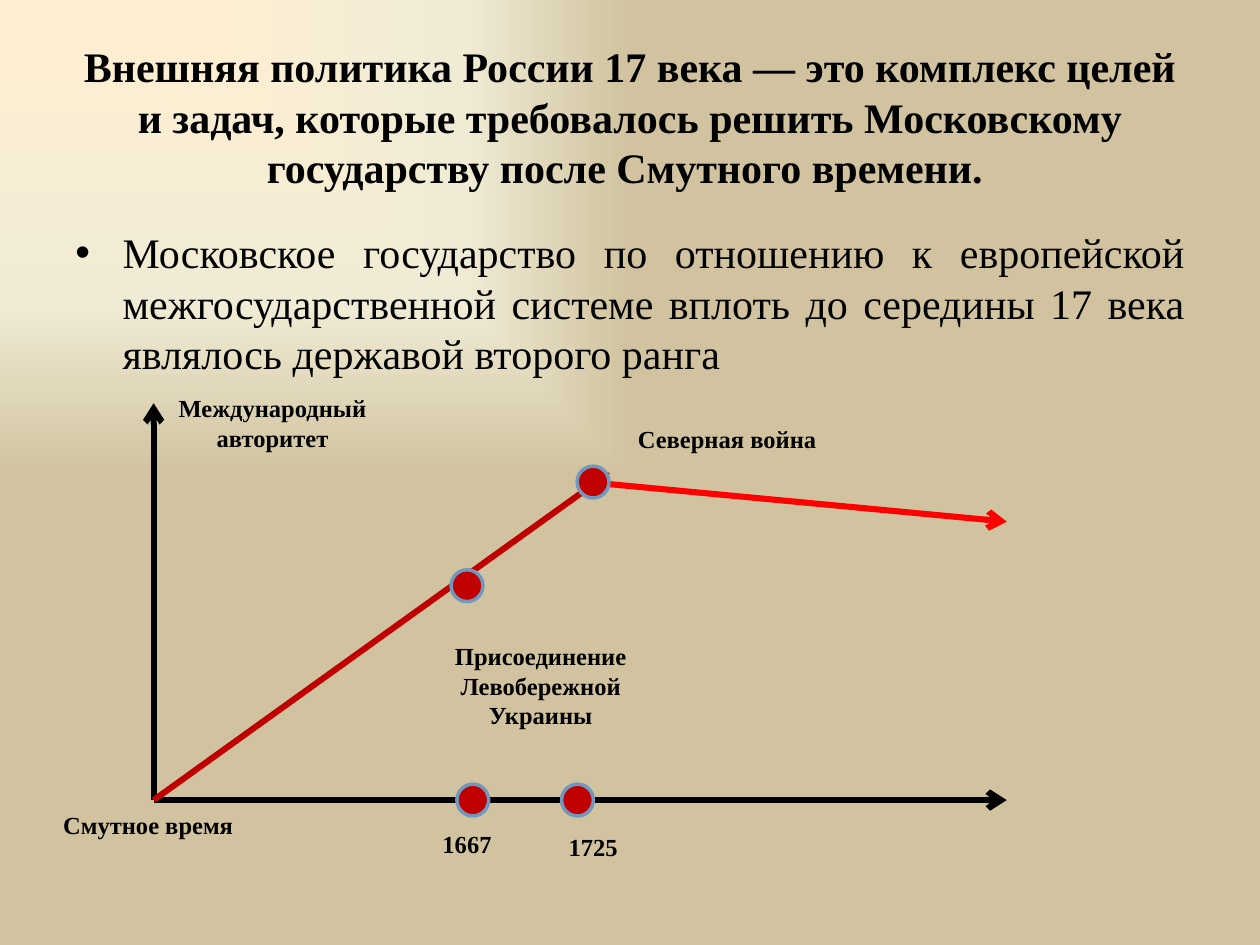
from lxml.etree import SubElement
from pptx import Presentation
from pptx.dml.color import RGBColor
from pptx.enum.shapes import MSO_CONNECTOR as Connector, MSO_SHAPE as Shape
from pptx.enum.text import MSO_ANCHOR as Anchor, PP_ALIGN as Align
from pptx.oxml import parse_xml
from pptx.oxml.ns import nsdecls, qn
from pptx.util import Pt

TITLE = ("Внешняя политика России 17 века — это комплекс целей и задач, которые "
         "требовалось решить Московскому государству после Смутного времени. ")
BODY = ("Московское государство по отношению к европейской межгосударственной "
        "системе вплоть до середины 17 века являлось державой второго ранга")

THEME = {
    "font": "Times New Roman", "heading": 24, "label": 14,
    "text": "000000", "axis": "000000", "rise": "C00000", "decline": "FF0000",
    "dot": "C00000", "dot_edge": "7197BD", "line": 3.5, "dot_line": 2,
    "background": [(0, "FFEFD1"), (65, "F0EBD5"), (100, "D1C39F")],
}

ORIGIN = (87.8, 457.2)
AXIS_END = 575.3
DOT_SIZE = 18.2
BULLET_INDENT = 27

ARROWS = [
    ("axis", ORIGIN, (ORIGIN[0], 230.4)),
    ("axis", ORIGIN, (AXIS_END, ORIGIN[1])),
    ("rise", ORIGIN, (348.5, 270)),
    ("decline", (339.1, 275.8), (AXIS_END, 298.1)),
]
DOT_CENTRES = [(338.9, 275.5), (266.9, 334.7), (270.2, ORIGIN[1]), (330, ORIGIN[1])]
LABELS = [
    (["Международный", "авторитет"], (87.8, 221.2, 136, 41.2)),
    (["Смутное время"], (16.7, 459.6, 136, 24.2)),
    (["Присоединение Левобережной Украины"], (241, 363, 136, 58.2)),
    (["Северная война"], (347.5, 238.5, 136, 24.2)),
    (["1667"], (221.4, 470.2, 91, 24.2)),
    (["1725"], (293.5, 471.8, 91, 24.2)),
]


def color(name):
    return RGBColor.from_string(THEME[name])


def paint_background(page):
    page.background.fill.solid()
    stops = "".join(f'<a:gs pos="{place * 1000}"><a:srgbClr val="{tint}"/></a:gs>'
                    for place, tint in THEME["background"])
    gradient = parse_xml(
        f'<a:gradFill {nsdecls("a")} rotWithShape="1"><a:gsLst>{stops}</a:gsLst>'
        '<a:path path="rect"><a:fillToRect r="100000" b="100000"/></a:path></a:gradFill>')
    properties = page.background._cSld.find(".//" + qn("p:bgPr"))
    properties.replace(properties[0], gradient)


def add_text(page, lines, place, size, bold=True, align=Align.CENTER,
             anchor=Anchor.TOP, bullet=False):
    frame = page.shapes.add_textbox(*map(Pt, place)).text_frame
    frame.word_wrap = True
    frame.vertical_anchor = anchor
    frame.text = "\n".join(lines)
    for para in frame.paragraphs:
        para.alignment = align
        if bullet:
            properties = para._p.get_or_add_pPr()
            properties.set("marL", str(Pt(BULLET_INDENT)))
            properties.set("indent", str(-Pt(BULLET_INDENT)))
            SubElement(properties, qn("a:buFont"), typeface="Arial")
            SubElement(properties, qn("a:buChar"), char="•")
        para.font.name = THEME["font"]
        para.font.size = Pt(THEME[size])
        para.font.bold = bold
        para.font.color.rgb = color("text")


def add_arrow(page, tint, start, end):
    arrow = page.shapes.add_connector(Connector.STRAIGHT, *map(Pt, start + end))
    arrow.line.color.rgb = color(tint)
    arrow.line.width = Pt(THEME["line"])
    SubElement(arrow.line._get_or_add_ln(), qn("a:tailEnd"), type="arrow")
    SubElement(arrow._element.spPr, qn("a:effectLst"))


def add_dot(page, x, y):
    corner = (x - DOT_SIZE / 2, y - DOT_SIZE / 2)
    dot = page.shapes.add_shape(Shape.OVAL, *map(Pt, corner + (DOT_SIZE, DOT_SIZE)))
    dot.shadow.inherit = False
    dot.fill.solid()
    dot.fill.fore_color.rgb = color("dot")
    dot.line.color.rgb = color("dot_edge")
    dot.line.width = Pt(THEME["dot_line"])


def main():
    """Build the slide on Russian foreign policy in the 17th century."""
    deck = Presentation()
    deck.slide_width, deck.slide_height = Pt(720), Pt(540)
    page = deck.slides.add_slide(deck.slide_layouts[6])
    paint_background(page)
    add_text(page, [TITLE], (36, 21.6, 648, 90), "heading", anchor=Anchor.MIDDLE)
    add_text(page, [BODY], (36, 126, 648, 356.4), "heading", bold=False,
             align=Align.JUSTIFY, bullet=True)
    for arrow in ARROWS:
        add_arrow(page, *arrow)
    for centre in DOT_CENTRES:
        add_dot(page, *centre)
    for lines, place in LABELS:
        add_text(page, lines, place, "label")
    deck.save("out.pptx")


if __name__ == "__main__":
    main()
